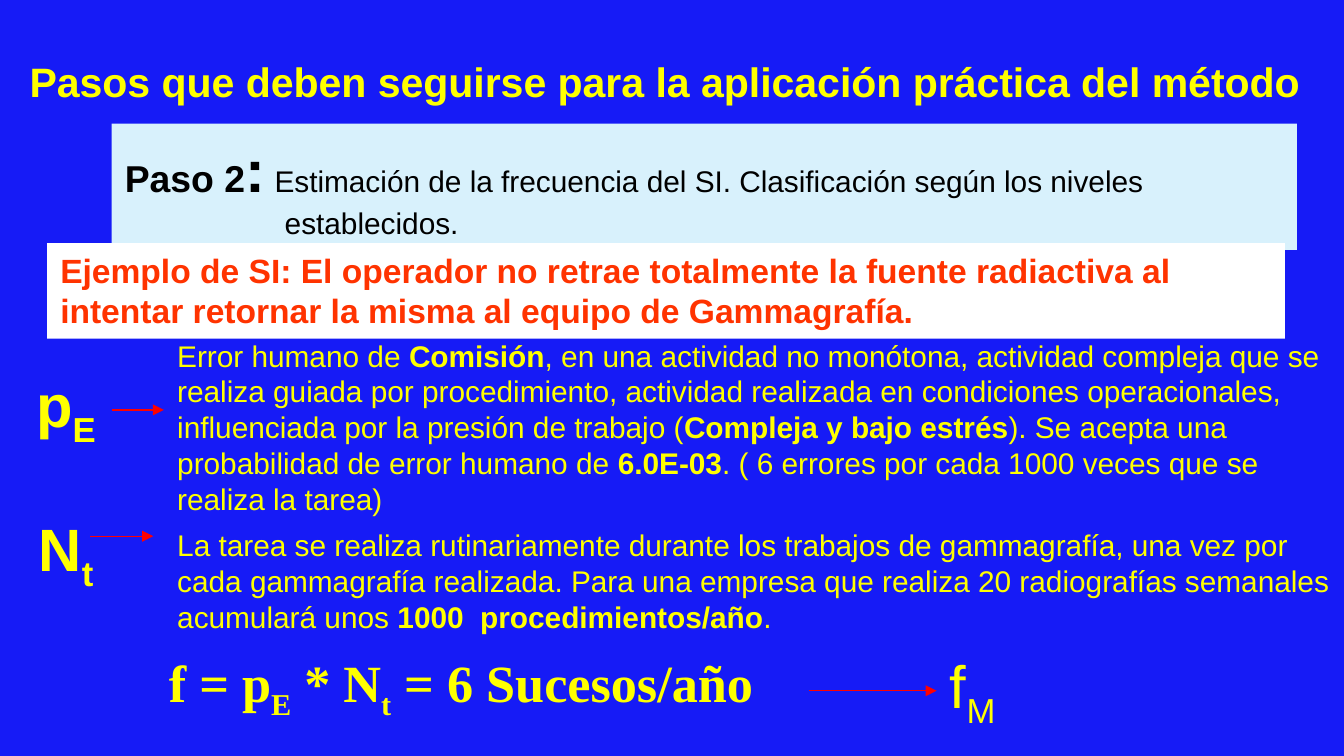
import pptx
import pptx.util
from lxml import etree
from pptx.dml.color import RGBColor
from pptx.enum.shapes import MSO_CONNECTOR, MSO_SHAPE
from pptx.enum.text import MSO_ANCHOR, PP_ALIGN
from pptx.oxml.ns import qn
from pptx.util import Inches, Pt

BLUE, PALE_BLUE, WHITE = "161BF6", "D8F1FC", "FFFFFF"
YELLOW, ORANGE, RED, BLACK = "FFFF00", "FF3300", "FF0000", "000000"

# Content: every run is (text, style), style letters: b bold, s subscript
TITLE = [("Pasos que deben seguirse para la aplicación práctica del método", "b")]
STEP = [
    ("Paso 2", "b", 20),
    (":", "b", 32),
    (" ", "b", 18),
    ("Estimación de la frecuencia del SI. Clasificación según los niveles establecidos.", "", 16),
]
EXAMPLE = [("Ejemplo de SI: El operador no retrae totalmente la fuente radiactiva al "
            "intentar retornar la misma al equipo de Gammagrafía.", "b")]
ERROR = [
    ("Error humano de ", ""),
    ("Comisión", "b"),
    (", en una actividad no monótona, actividad compleja que se realiza guiada por "
     "procedimiento, actividad realizada en condiciones operacionales, influenciada "
     "por la presión de trabajo (", ""),
    ("Compleja y bajo estrés", "b"),
    ("). Se acepta una probabilidad de error humano de ", ""),
    ("6.0E-03", "b"),
    (". ( 6 errores por cada 1000 veces que se realiza la tarea)", ""),
]
TASK = [
    ("La tarea se realiza rutinariamente durante los trabajos de gammagrafía, una vez "
     "por cada gammagrafía realizada. Para una empresa que realiza 20 radiografías "
     "semanales acumulará unos ", ""),
    ("1000  procedimientos/año", "b"),
    (".", ""),
]
FORMULA = [("f = p", "b"), ("E", "bs"), (" * N", "b"), ("t", "bs"), (" = 6 Sucesos/año", "b")]

# Panels: box, fill, runs, size, colour, hanging indent, anchor
PANELS = [
    ((0.83, 0.92, 8.82, 0.94), PALE_BLUE, STEP, 16, BLACK, 1.19, MSO_ANCHOR.MIDDLE),
    ((0.35, 1.81, 9.21, 0.71), WHITE, EXAMPLE, 18, ORANGE, 0, MSO_ANCHOR.TOP),
]
# Plain texts: box, runs, size, font, alignment
TEXTS = [
    ((0.2, 4.79, 6.46, 0.57), FORMULA, 28, "Times New Roman", PP_ALIGN.CENTER),
    ((0.17, 2.69, 0.86, 0.64), [("p", "b"), ("E", "bs")], 32, "Arial", PP_ALIGN.LEFT),
    ((1.22, 2.46, 8.78, 1.45), ERROR, 16, "Arial", PP_ALIGN.LEFT),
    ((0.19, 3.76, 0.63, 0.64), [("N", "b"), ("t", "bs")], 32, "Arial", PP_ALIGN.LEFT),
    ((1.22, 3.87, 8.78, 0.91), TASK, 16, "Arial", PP_ALIGN.LEFT),
    ((6.97, 4.78, 0.94, 0.64), [("f", ""), ("M", "s")], 32, "Arial", PP_ALIGN.LEFT),
]
# Arrows: start x, end x, y
ARROWS = [(0.83, 1.22, 3.05), (0.67, 1.14, 3.99), (6.02, 6.97, 5.14)]


def color(hex_value):
    return RGBColor.from_string(hex_value)


def lengths(box):
    return [Inches(value) for value in box]


def write(shape, runs, size, text_color, font="Arial", alignment=PP_ALIGN.LEFT,
          anchor=MSO_ANCHOR.TOP):
    frame = shape.text_frame
    frame.word_wrap = True
    frame.vertical_anchor = anchor
    frame.margin_left = frame.margin_right = Inches(0.1)
    frame.margin_top = frame.margin_bottom = Inches(0.05)
    paragraph = frame.paragraphs[0]
    paragraph.alignment = alignment
    for text, style, *own_size in runs:
        run = paragraph.add_run()
        run.text = text
        run.font.name = font
        run.font.size = Pt(own_size[0] if own_size else size)
        run.font.bold = "b" in style
        run.font.color.rgb = color(text_color)
        if "s" in style:
            run._r.get_or_add_rPr().set("baseline", "-25000")
    return paragraph


def add_panel(slide, box, fill, runs, size, text_color, hanging, anchor):
    panel = slide.shapes.add_shape(MSO_SHAPE.RECTANGLE, *lengths(box))
    panel.shadow.inherit = False
    panel.fill.solid()
    panel.fill.fore_color.rgb = color(fill)
    panel.line.fill.background()
    paragraph = write(panel, runs, size, text_color, anchor=anchor)
    if hanging:
        properties = paragraph._p.get_or_add_pPr()
        properties.set("marL", str(Inches(hanging)))
        properties.set("indent", str(-Inches(hanging)))


def add_arrow(slide, start, end, y):
    arrow = slide.shapes.add_connector(MSO_CONNECTOR.STRAIGHT, *lengths((start, y, end, y)))
    arrow.line.color.rgb = color(RED)
    arrow.line.width = Pt(0.75)
    etree.SubElement(arrow.line._get_or_add_ln(), qn("a:tailEnd"), type="triangle")
    etree.SubElement(arrow._element.spPr, qn("a:effectLst"))


def main():
    # Widescreen 16:9 slide
    presentation = pptx.Presentation()
    presentation.slide_width = Inches(10)
    presentation.slide_height = Inches(10 * 9 / 16)
    slide = presentation.slides.add_slide(presentation.slide_layouts[5])
    slide.background.fill.solid()
    slide.background.fill.fore_color.rgb = color(BLUE)

    # Step and example panels
    for panel in PANELS:
        add_panel(slide, *panel)

    # Symbols, explanations and formula
    for box, runs, size, font, alignment in TEXTS:
        text_box = slide.shapes.add_textbox(*lengths(box))
        write(text_box, runs, size, YELLOW, font, alignment)

    # Arrows
    for arrow in ARROWS:
        add_arrow(slide, *arrow)

    # Title
    title = slide.shapes.title
    title.left, title.top, title.width, title.height = lengths((0.12, 0.37, 9.76, 0.47))
    write(title, TITLE, 22, YELLOW, anchor=MSO_ANCHOR.MIDDLE)

    presentation.save("out.pptx")


if __name__ == "__main__":
    main()
